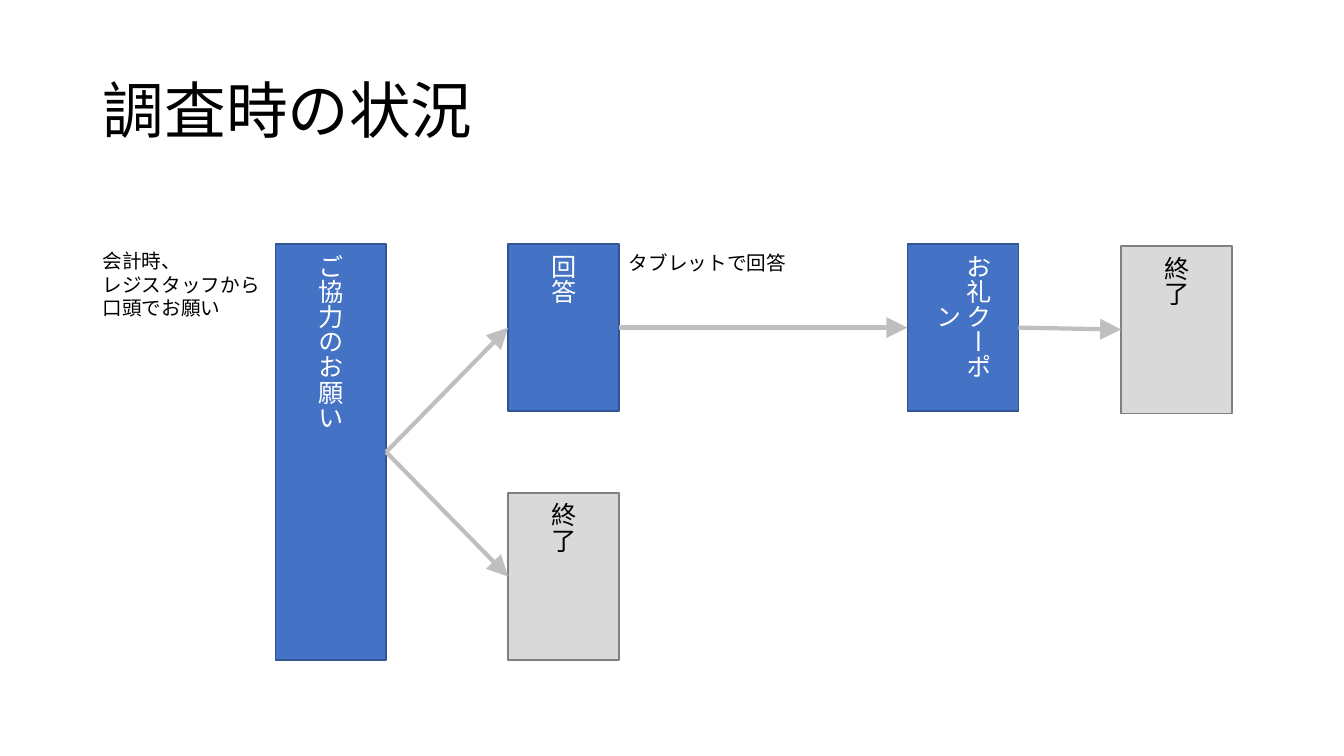
import dataclasses

import lxml.etree
import pptx
import pptx.dml.color
import pptx.enum.shapes
import pptx.enum.text
import pptx.oxml.ns
import pptx.shapes.autoshape
import pptx.slide
import pptx.text.text
import pptx.util

FONT = "Noto Sans CJK JP"
PX = 9144  # EMU per px, 100 px to the inch
LEFT, RIGHT = 1, 3  # connection sites of a rectangle


@dataclasses.dataclass
class Style:
    fill: str
    line: str
    text: str


STEP = Style("4472C4", "325491", "FFFFFF")
END = Style("D9D9D9", "808080", "000000")


@dataclasses.dataclass
class Box:
    text: str
    left: int
    top: int
    height: int
    style: Style


@dataclasses.dataclass
class Label:
    lines: list[str]
    left: int
    top: int
    width: int
    height: int


BOX_WIDTH = 110
BOXES = {
    "ask": Box("ご協力のお願い", 273, 242, 413, STEP),
    "answer": Box("回答", 504, 242, 166, STEP),
    "refuse": Box("終了", 504, 489, 166, END),
    "coupon": Box("お礼クーポン", 900, 242, 166, STEP),
    "finish": Box("終了", 1112, 244, 166, END),
}
LABELS = [
    Label(["会計時、", "レジスタッフから口頭でお願い"], 92, 242, 179, 81),
    Label(["タブレットで回答"], 614, 244, 224, 34),
]
ARROWS = [("ask", "answer"), ("ask", "refuse"), ("answer", "coupon"), ("coupon", "finish")]


def px(*sizes: int) -> list[pptx.util.Emu]:
    return [pptx.util.Emu(size * PX) for size in sizes]


def rgb(code: str) -> pptx.dml.color.RGBColor:
    return pptx.dml.color.RGBColor.from_string(code)


def sub(parent: lxml.etree.ElementBase, tag: str, **attrs: str) -> None:
    lxml.etree.SubElement(parent, pptx.oxml.ns.qn(tag), **attrs)


def style_text(para: pptx.text.text._Paragraph, size: int, color: str) -> None:
    para.font.size = pptx.util.Pt(size)
    para.font.color.rgb = rgb(color)
    para.font.name = FONT
    props = para._p.get_or_add_pPr().find(pptx.oxml.ns.qn("a:defRPr"))
    sub(props, "a:ea", typeface=FONT)


def add_title(slide: pptx.slide.Slide, text: str) -> None:
    title = slide.shapes.title
    title.left, title.top, title.width, title.height = px(92, 40, 1150, 145)
    frame = title.text_frame
    frame.text = text
    frame.vertical_anchor = pptx.enum.text.MSO_ANCHOR.MIDDLE
    para = frame.paragraphs[0]
    para.alignment = pptx.enum.text.PP_ALIGN.LEFT
    para.line_spacing = 0.9
    style_text(para, 44, "000000")


def add_box(slide: pptx.slide.Slide, box: Box) -> pptx.shapes.autoshape.Shape:
    shape = slide.shapes.add_shape(
        pptx.enum.shapes.MSO_SHAPE.RECTANGLE,
        *px(box.left, box.top, BOX_WIDTH, box.height),
    )
    shape.shadow.inherit = False
    shape.fill.solid()
    shape.fill.fore_color.rgb = rgb(box.style.fill)
    shape.line.color.rgb = rgb(box.style.line)
    shape.line.width = pptx.util.Pt(1)
    frame = shape.text_frame
    frame.text = box.text
    frame.vertical_anchor = pptx.enum.text.MSO_ANCHOR.MIDDLE
    frame._txBody.bodyPr.set("vert", "eaVert")
    para = frame.paragraphs[0]
    para.alignment = pptx.enum.text.PP_ALIGN.CENTER
    style_text(para, 18, box.style.text)
    return shape


def add_label(slide: pptx.slide.Slide, label: Label) -> None:
    area = px(label.left, label.top, label.width, label.height)
    frame = slide.shapes.add_textbox(*area).text_frame
    frame.word_wrap = True
    frame.auto_size = pptx.enum.text.MSO_AUTO_SIZE.SHAPE_TO_FIT_TEXT
    frame.text = "\n".join(label.lines)
    for para in frame.paragraphs:
        style_text(para, 14, "000000")


def add_arrow(
    slide: pptx.slide.Slide,
    start: pptx.shapes.autoshape.Shape,
    end: pptx.shapes.autoshape.Shape,
) -> None:
    arrow = slide.shapes.add_connector(
        pptx.enum.shapes.MSO_CONNECTOR.STRAIGHT,
        start.left + start.width,
        start.top + start.height // 2,
        end.left,
        end.top + end.height // 2,
    )
    arrow.begin_connect(start, RIGHT)
    arrow.end_connect(end, LEFT)
    arrow.line.color.rgb = rgb("BFBFBF")
    arrow.line.width = pptx.util.Pt(3)
    sub(arrow.line._get_or_add_ln(), "a:tailEnd", type="triangle", w="lg", len="lg")
    sub(arrow._element.spPr, "a:effectLst")


def main() -> None:
    deck = pptx.Presentation()
    deck.slide_width, deck.slide_height = px(1333, 750)
    slide = deck.slides.add_slide(deck.slide_layouts.get_by_name("Title Only"))
    add_title(slide, "調査時の状況")
    shapes = {name: add_box(slide, box) for name, box in BOXES.items()}
    for label in LABELS:
        add_label(slide, label)
    for start, end in ARROWS:
        add_arrow(slide, shapes[start], shapes[end])
    deck.save("out.pptx")


if __name__ == "__main__":
    main()
